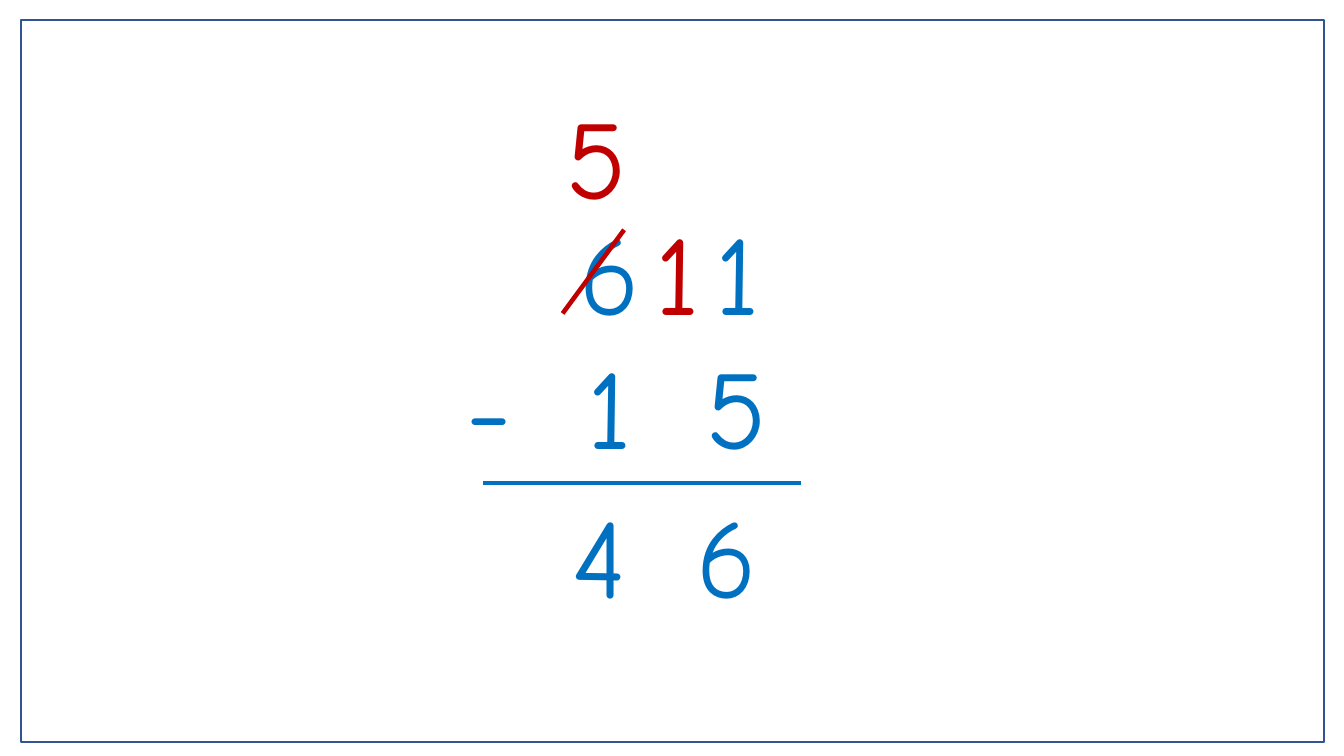
import pptx
import pptx.dml.color
import pptx.enum.shapes
import pptx.oxml.ns
import pptx.util
from lxml import etree

Inches = pptx.util.Inches
Pt = pptx.util.Pt
RGBColor = pptx.dml.color.RGBColor

BLUE = RGBColor(0x00, 0x70, 0xC0)
RED = RGBColor(0xC0, 0x00, 0x00)
FRAME_BLUE = RGBColor(0x32, 0x54, 0x91)
FONT = "Comic Neue"
DIGIT_SIZE = 80
DIGIT_WIDTH, DIGIT_HEIGHT = 1.69, 1.45

# Each row of the subtraction: text and its tab stops in inches
SUBTRACTION = [("\t6\t1", (1.12, 2.47)), ("-\t1\t5", (1.2, 2.38))]
# Single digits: text, left, top, colour
ANSWER = [("6", 6.81, 4.78, BLUE), ("4", 5.58, 4.78, BLUE)]
REGROUPING = [("1", 6.4, 1.97, RED), ("5", 5.52, 0.82, RED)]
# Rules: start, end, colour
ANSWER_LINE = ((4.79, 4.79), (7.94, 4.79), BLUE)
STRIKE_OUT = ((5.58, 3.11), (6.19, 2.28), RED)


def add_tab_stops(paragraph, stops):
    properties = paragraph._p.get_or_add_pPr()
    tab_list = etree.SubElement(properties, pptx.oxml.ns.qn("a:tabLst"))
    for stop in stops:
        etree.SubElement(tab_list, pptx.oxml.ns.qn("a:tab"),
                         pos=str(Inches(stop)), algn="l")


def add_numbers(slide, rows, left, top, width, height, color):
    box = slide.shapes.add_textbox(Inches(left), Inches(top), Inches(width), Inches(height))
    frame = box.text_frame
    frame.word_wrap = True
    for index, (text, stops) in enumerate(rows):
        paragraph = frame.add_paragraph() if index else frame.paragraphs[0]
        if stops:
            add_tab_stops(paragraph, stops)
        run = paragraph.add_run()
        run.text = text
        run.font.name = FONT
        run.font.size = Pt(DIGIT_SIZE)
        run.font.color.rgb = color


def add_digits(slide, digits):
    for text, left, top, color in digits:
        add_numbers(slide, [(text, ())], left, top, DIGIT_WIDTH, DIGIT_HEIGHT, color)


def add_rule(slide, start, end, color):
    connector = slide.shapes.add_connector(
        pptx.enum.shapes.MSO_CONNECTOR.STRAIGHT,
        *(Inches(value) for value in start + end))
    connector.line.color.rgb = color
    connector.line.width = Pt(3.25)
    etree.SubElement(connector._element.spPr, pptx.oxml.ns.qn("a:effectLst"))


def main():
    presentation = pptx.Presentation()
    presentation.slide_width = Inches(13.33)
    presentation.slide_height = Inches(7.5)
    slide = presentation.slides.add_slide(presentation.slide_layouts[6])

    # Frame around the slide
    border = slide.shapes.add_shape(
        pptx.enum.shapes.MSO_SHAPE.RECTANGLE,
        Inches(0.21), Inches(0.2), Inches(12.92), Inches(7.16))
    border.shadow.inherit = False
    border.fill.background()
    border.line.color.rgb = FRAME_BLUE
    border.line.width = Pt(1.75)

    # Subtraction, answer and regrouping
    add_numbers(slide, SUBTRACTION, 4.53, 1.97, 4.33, 3.1, BLUE)
    add_rule(slide, *ANSWER_LINE)
    add_digits(slide, ANSWER)
    add_digits(slide, REGROUPING)
    add_rule(slide, *STRIKE_OUT)

    presentation.save("out.pptx")


if __name__ == "__main__":
    main()
